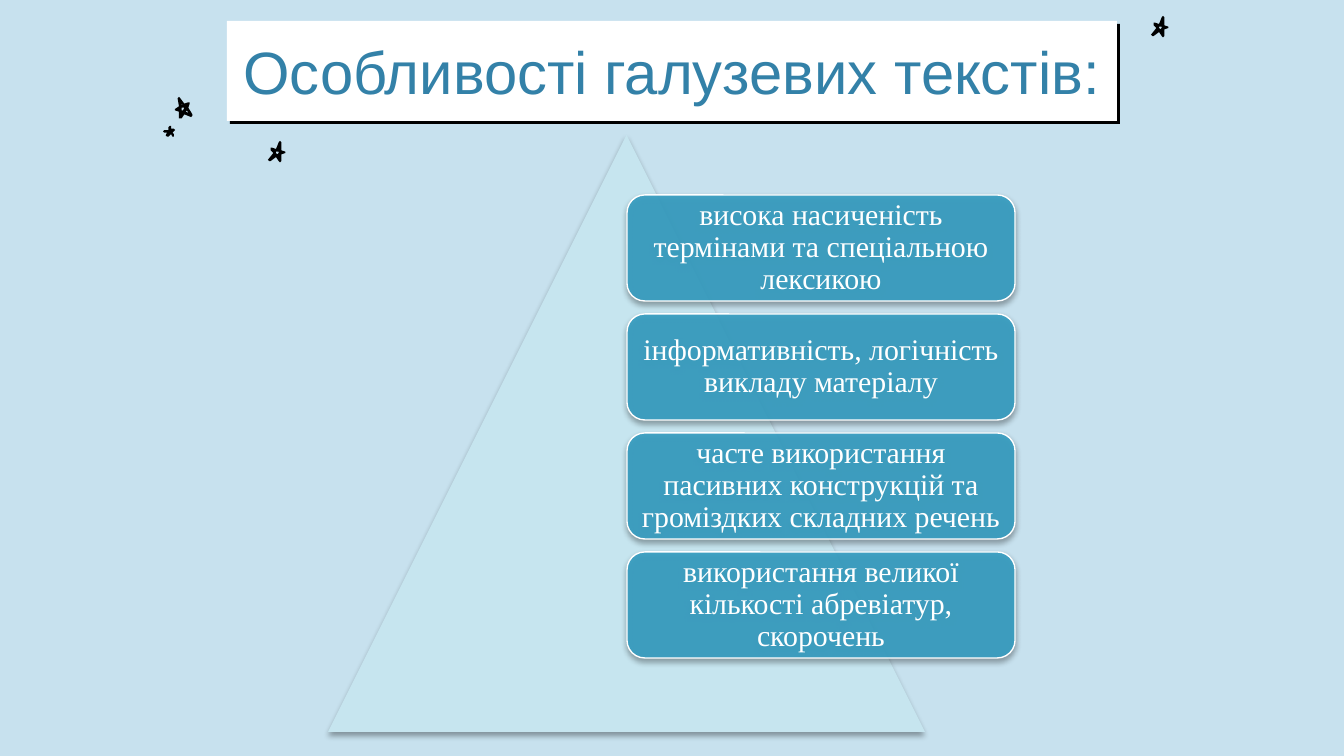
from pptx import Presentation
from pptx.dml.color import RGBColor
from pptx.enum.shapes import MSO_SHAPE as SHAPE
from pptx.enum.text import MSO_ANCHOR as ANCHOR, PP_ALIGN as ALIGN
from pptx.oxml.ns import qn
from pptx.oxml.xmlchemy import OxmlElement
from pptx.util import Pt

PX = 914400 / 134.4
STAR_UNIT = 9144  # star outlines are drawn in hundredths of an inch

SKY = RGBColor(0xC7, 0xE1, 0xEE)
ICE = RGBColor(0xC6, 0xE5, 0xEF)
TEAL = RGBColor(0x35, 0x9D, 0xC1)
BLUE = RGBColor(0x33, 0x81, 0xA8)
WHITE = RGBColor(0xFF, 0xFF, 0xFF)
BLACK = RGBColor(0, 0, 0)

# Blur and distance in points, direction in degrees, opacity in percent
HARD_SHADOW = (0, 2.2, 44, 100)
SOFT_SHADOW = (3.1, 1.8, 90, 35)

TITLE = "Особливості галузевих текстів:"
FEATURES = [
    "висока насиченість термінами та спеціальною лексикою",
    "інформативність, логічність викладу матеріалу",
    "часте використання пасивних конструкцій та громіздких складних речень",
    "використання великої кількості абревіатур, скорочень",
]

# Each star is a list of contours: the outline first, then its holes
OPEN_STAR = [
    [(0, 10), (3, 11), (3, 16), (4, 16), (5, 16), (7, 13), (12, 15),
     (13, 14), (13, 13), (10, 8), (11, 5), (11, 4), (10, 4), (7, 5),
     (4, 1), (3, 0), (2, 1), (3, 7), (0, 9)],
    [(9, 10), (10, 12), (8, 11)],
    [(7, 8), (6, 10), (5, 10), (5, 8)],
    [(6, 6), (5, 6), (5, 5)],
]
SMALL_STAR = [
    [(5, 0), (4, 1), (4, 3), (1, 3), (0, 4), (1, 5), (3, 5), (2, 7),
     (3, 8), (4, 8), (6, 6), (7, 8), (8, 8), (8, 6), (7, 5), (9, 3),
     (8, 2), (6, 2), (6, 0)],
]
TILTED_STAR = [
    [(8, 1), (6, 6), (3, 5), (2, 5), (2, 7), (4, 9), (0, 14), (1, 15),
     (2, 15), (6, 12), (8, 15), (9, 16), (10, 15), (10, 10), (13, 9),
     (13, 8), (10, 7), (10, 1), (9, 0)],
    [(6, 8), (8, 8), (8, 9), (7, 10), (6, 9)],
]
STARS = [
    (OPEN_STAR, 175, 97),
    (SMALL_STAR, 163, 126),
    (TILTED_STAR, 268, 141),
    (TILTED_STAR, 1151, 16),
]


def px(n):
    return round(n * PX)


def set_alpha(color_element, percent):
    alpha = OxmlElement("a:alpha")
    alpha.set("val", str(percent * 1000))
    color_element.append(alpha)


class Deck:
    def __init__(self, width, height):
        self.prs = Presentation()
        self.prs.slide_width, self.prs.slide_height = px(width), px(height)
        self.s = None

    def add_slide(self, color):
        self.s = self.prs.slides.add_slide(self.prs.slide_layouts[6])
        self.s.background.fill.solid()
        self.s.background.fill.fore_color.rgb = color

    def paint(self, sp, fill, line=None):
        sp.shadow.inherit = False
        sp.fill.solid()
        sp.fill.fore_color.rgb = fill
        if line is None:
            sp.line.fill.background()
        else:
            sp.line.color.rgb = line
            sp.line.width = Pt(0.75)

    def shadow(self, sp, blur, distance, angle, opacity):
        outer = OxmlElement("a:outerShdw")
        outer.set("blurRad", str(Pt(blur)))
        outer.set("dist", str(Pt(distance)))
        outer.set("dir", str(angle * 60000))
        outer.set("algn", "ctr")
        outer.set("rotWithShape", "0")
        color = OxmlElement("a:srgbClr")
        color.set("val", str(BLACK))
        set_alpha(color, opacity)
        outer.append(color)
        sp._element.spPr.find(qn("a:effectLst")).append(outer)

    def shape(self, kind, x, y, w, h, fill, shadow, line=None):
        sp = self.s.shapes.add_shape(kind, px(x), px(y), px(w), px(h))
        self.paint(sp, fill, line)
        self.shadow(sp, *shadow)
        return sp

    def text(self, sp, text, font, size, color, inset, spacing=1.0):
        tf = sp.text_frame
        tf.word_wrap = True
        tf.vertical_anchor = ANCHOR.MIDDLE
        tf.margin_left = tf.margin_right = px(inset)
        tf.margin_top = tf.margin_bottom = px(inset)
        p = tf.paragraphs[0]
        p.alignment = ALIGN.CENTER
        p.line_spacing = spacing
        r = p.add_run()
        r.text = text
        r.font.name = font
        r.font.size = Pt(size)
        r.font.color.rgb = color

    def title(self, text, x, y, w, h):
        sp = self.shape(SHAPE.RECTANGLE, x, y, w, h, WHITE, HARD_SHADOW)
        self.text(sp, text, "Arial", 32, BLUE, 13)

    def card(self, text, x, y, w, h):
        """Rounded corners already inset the text by about 5 px a side."""
        sp = self.shape(SHAPE.ROUNDED_RECTANGLE, x, y, w, h, TEAL,
                        SOFT_SHADOW, WHITE)
        fill = sp._element.spPr.find(qn("a:solidFill"))
        set_alpha(fill.find(qn("a:srgbClr")), 90)
        self.text(sp, text, "Times New Roman", 16, WHITE, 9, 0.9)

    def star(self, contours, x, y):
        outline, *holes = contours
        builder = self.s.shapes.build_freeform(*outline[0], scale=STAR_UNIT)
        builder.add_line_segments(outline[1:])
        for hole in holes:
            builder.move_to(*hole[0])
            builder.add_line_segments(hole[1:])
        self.paint(builder.convert_to_shape(px(x), px(y)), BLACK)


def main():
    deck = Deck(1344, 756)
    deck.add_slide(SKY)
    deck.title(TITLE, 227, 21, 890, 100)
    for contours, x, y in STARS:
        deck.star(contours, x, y)
    deck.shape(SHAPE.ISOSCELES_TRIANGLE, 328, 135, 597, 597, ICE, SOFT_SHADOW)
    height, gap = 106, 13
    for i, feature in enumerate(FEATURES):
        deck.card(feature, 627, 195 + i * (height + gap), 388, height)
    deck.prs.save("out.pptx")


if __name__ == "__main__":
    main()
